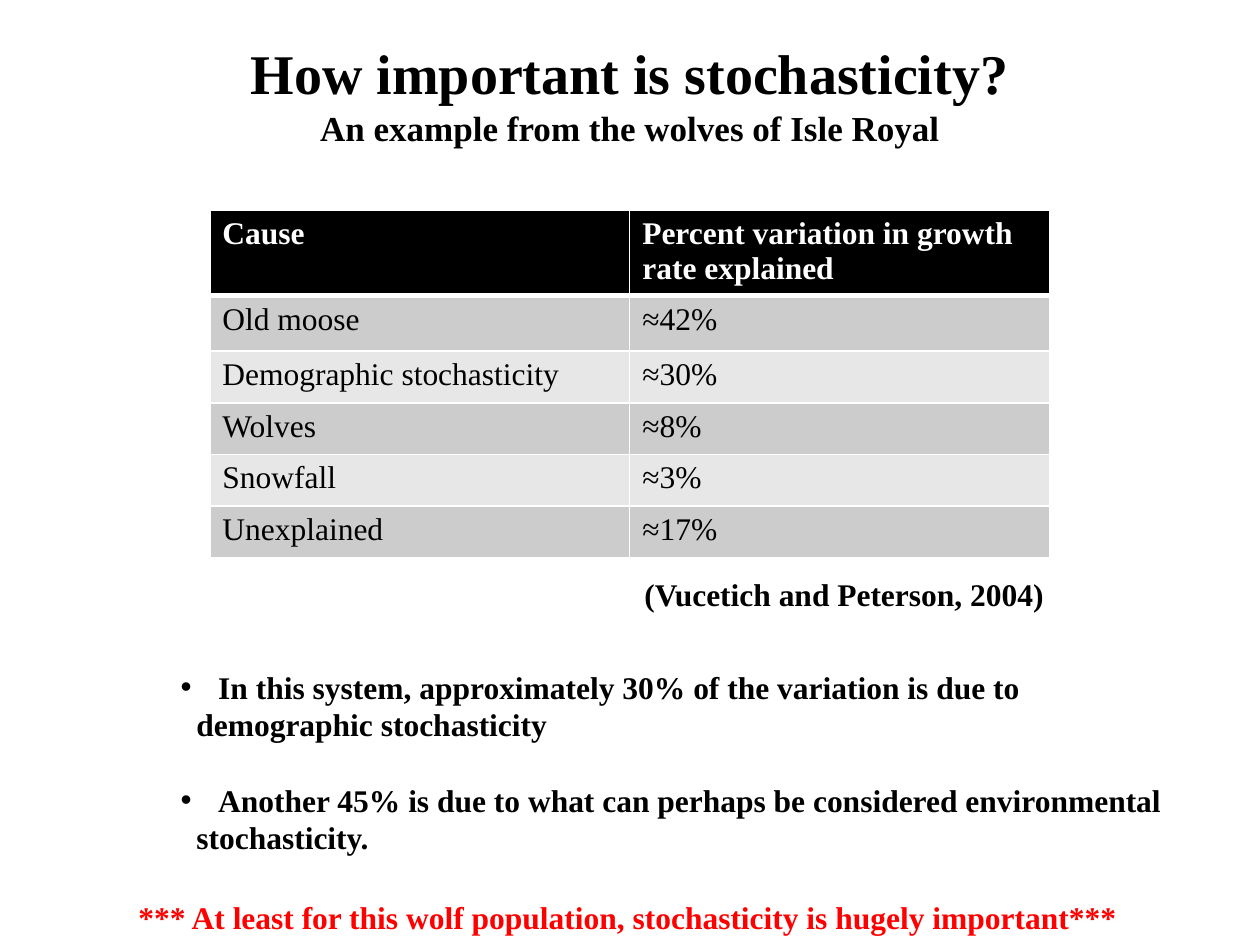
import lxml.etree
import pptx
import pptx.dml.color
import pptx.enum.text
import pptx.oxml.ns
import pptx.util

Cm, Pt = pptx.util.Cm, pptx.util.Pt
qn = pptx.oxml.ns.qn
ALIGN = pptx.enum.text.PP_ALIGN
FONT = "Times New Roman"

CAUSES = [
    ("Cause", "Percent variation in growth rate explained"),
    ("Old moose", "≈42%"),
    ("Demographic stochasticity", "≈30%"),
    ("Wolves", "≈8%"),
    ("Snowfall", "≈3%"),
    ("Unexplained", "≈17%"),
]
ROW_HEIGHTS = [1.73, 1.12] + [1.04] * 4
FINDINGS = [
    ("In this system, approximately 30% of the variation is due to",
     "demographic stochasticity"),
    ("Another 45% is due to what can perhaps be considered environmental",
     "stochasticity."),
]


def rgb(value):
    return pptx.dml.color.RGBColor.from_string(value)


def write(paragraph, text, size=18, color="000000", bold=True, align=ALIGN.LEFT):
    run = paragraph.add_run()
    run.text = text
    run.font.name = FONT
    run.font.size = Pt(size)
    run.font.bold = bold
    run.font.color.rgb = rgb(color)
    paragraph.alignment = align


def indent(paragraph, hang, bullet=None):
    """Indent by hang cm; a bullet sits at the left edge of the indent."""
    properties = paragraph._p.get_or_add_pPr()
    properties.set("marL", str(Cm(hang)))
    properties.set("indent", str(-Cm(hang) if bullet else 0))
    if bullet:
        lxml.etree.SubElement(properties, qn("a:buFont"), typeface="Arial")
        lxml.etree.SubElement(properties, qn("a:buChar"), char=bullet)


def add_border(cell, side, width):
    line = lxml.etree.SubElement(cell._tc.get_or_add_tcPr(), qn(f"a:ln{side}"), w=str(Pt(width)))
    fill = lxml.etree.SubElement(line, qn("a:solidFill"))
    lxml.etree.SubElement(fill, qn("a:srgbClr"), val="FFFFFF")


def add_heading(slide, left, top, width, height):
    title = slide.shapes.title
    title.left, title.top, title.width, title.height = map(Cm, (left, top, width, height))
    frame = title.text_frame
    frame.auto_size = pptx.enum.text.MSO_AUTO_SIZE.NONE
    frame.vertical_anchor = pptx.enum.text.MSO_ANCHOR.MIDDLE
    write(frame.paragraphs[0], "How important is stochasticity?", size=32, align=ALIGN.CENTER)
    write(frame.add_paragraph(), "An example from the wolves of Isle Royal",
          size=20, align=ALIGN.CENTER)


def add_cause_table(slide, left, top, width):
    table = slide.shapes.add_table(len(CAUSES), 2, Cm(left), Cm(top), Cm(width),
                                   Cm(sum(ROW_HEIGHTS))).table
    for row, (texts, height) in enumerate(zip(CAUSES, ROW_HEIGHTS)):
        table.rows[row].height = Cm(height)
        header = row == 0
        shade = "000000" if header else ("E7E7E7", "CCCCCC")[row % 2]
        for column, text in enumerate(texts):
            cell = table.cell(row, column)
            for side, border in (("L", 1), ("R", 1), ("T", 3 if row == 1 else 1),
                                 ("B", 3 if header else 1)):
                add_border(cell, side, border)
            cell.fill.solid()
            cell.fill.fore_color.rgb = rgb(shade)
            write(cell.text_frame.paragraphs[0], text, bold=header,
                  color="FFFFFF" if header else "000000")


def add_text_frame(slide, left, top, width, height, wrap=True):
    frame = slide.shapes.add_textbox(Cm(left), Cm(top), Cm(width), Cm(height)).text_frame
    frame.word_wrap = wrap
    return frame


def add_findings(slide, left, top, width, height):
    frame = add_text_frame(slide, left, top, width, height)
    for number, (opening, ending) in enumerate(FINDINGS):
        first = frame.add_paragraph() if number else frame.paragraphs[0]
        second = frame.add_paragraph()
        write(first, opening)
        write(second, ending)
        for paragraph in (first, second):
            paragraph.line_spacing = Pt(21.5)
        if number:
            first.space_before = Pt(21.5)
        indent(first, 0.76, bullet="•")
        indent(second, 0.32)


def add_note(slide, text, left, top, width, height, **style):
    frame = add_text_frame(slide, left, top, width, height, wrap=False)
    write(frame.paragraphs[0], text, **style)


def main():
    deck = pptx.Presentation()
    deck.slide_width, deck.slide_height = Cm(25.4), Cm(19.05)
    slide = deck.slides.add_slide(deck.slide_layouts.get_by_name("Title Only"))
    add_heading(slide, 0, 0.64, 25.4, 2.49)
    add_cause_table(slide, 4.23, 4.23, 16.93)
    add_note(slide, "(Vucetich and Peterson, 2004)", 12.7, 11.46, 8.64, 1.02,
             align=ALIGN.CENTER)
    add_findings(slide, 3.39, 13.34, 20.75, 4.11)
    add_note(slide,
             "*** At least for this wolf population, stochasticity is hugely important***",
             2.54, 17.98, 20.42, 1.02, color="FF0000")
    deck.save("out.pptx")


if __name__ == "__main__":
    main()
